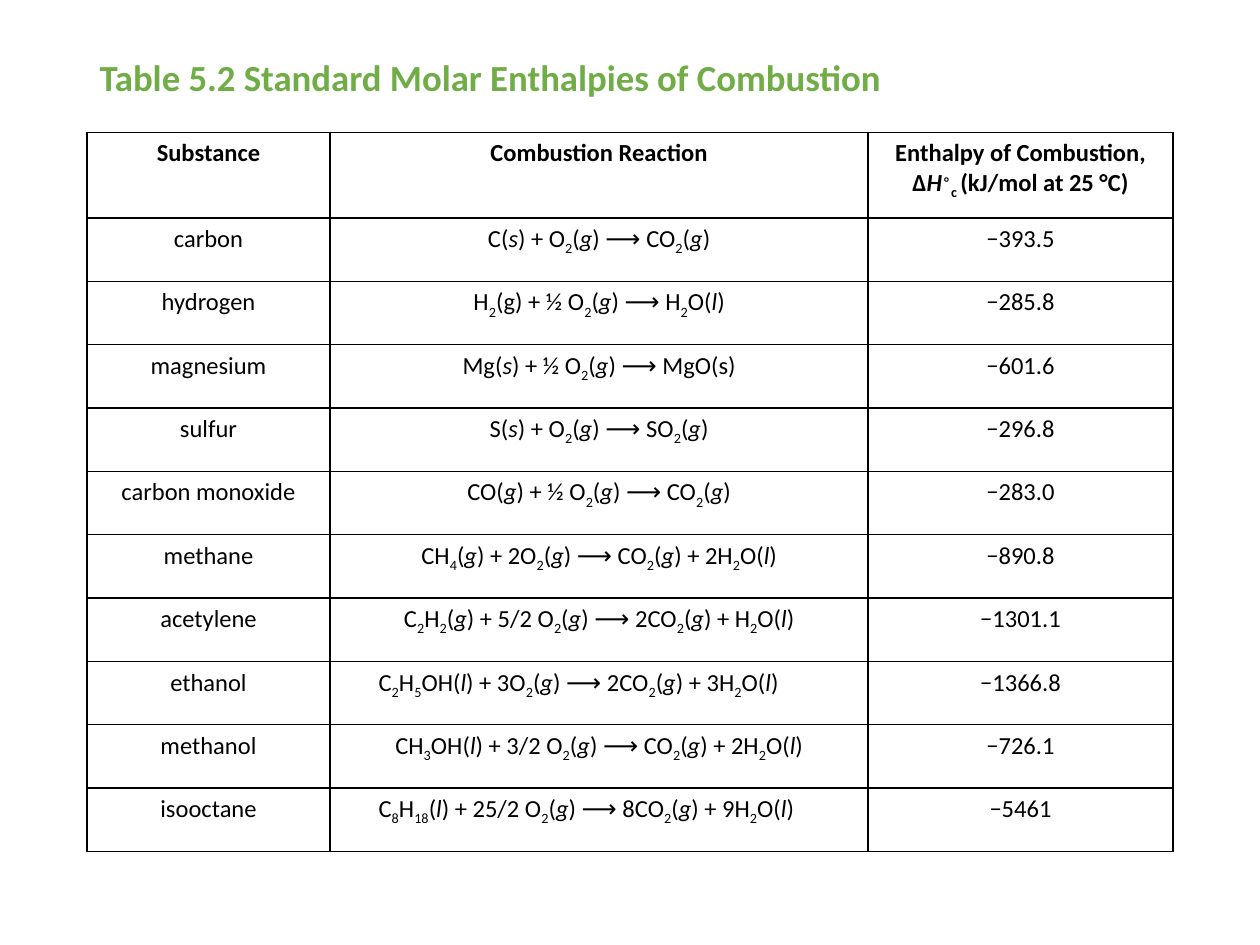
from typing import NamedTuple

from lxml.etree import SubElement
from pptx import Presentation
from pptx.dml.color import RGBColor
from pptx.enum.text import MSO_ANCHOR as Anchor, MSO_AUTO_SIZE as AutoSize, PP_ALIGN as Align
from pptx.oxml.ns import qn
from pptx.util import Inches, Pt

COLORS = {"heading": "70AD47", "ink": "000000"}
FONT = "Calibri"
LEFT, WIDTH = 0.69, 8.62
TABLE_TOP, TABLE_HEIGHT, HEADER_HEIGHT = 1.05, 5.71, 0.68
COLUMN_WIDTHS = (1.93, 4.27, 2.42)
BASELINES = {"_": "-25000", "^": "30000"}


class Combustion(NamedTuple):
    substance: str
    reaction: str
    enthalpy: str


HEADER = Combustion("Substance", "Combustion Reaction",
                    "Enthalpy of Combustion, Δ*H*^∘^_c _(kJ/mol at 25 °C)")
COMBUSTIONS = [
    Combustion("carbon", "C(*s*) + O_2_(*g*) ⟶ CO_2_(*g*)", "−393.5"),
    Combustion("hydrogen", "H_2_(g) + ½ O_2_(*g*) ⟶ H_2_O(*l*)", "−285.8"),
    Combustion("magnesium", "Mg(*s*) + ½ O_2_(*g*) ⟶ MgO(s)", "−601.6"),
    Combustion("sulfur", "S(*s*) + O_2_(*g*) ⟶ SO_2_(*g*)", "−296.8"),
    Combustion("carbon monoxide", "CO(*g*) + ½ O_2_(*g*) ⟶ CO_2_(*g*)", "−283.0"),
    Combustion("methane", "CH_4_(*g*) + 2O_2_(*g*) ⟶ CO_2_(*g*) + 2H_2_O(*l*)", "−890.8"),
    Combustion("acetylene", "C_2_H_2_(*g*) + 5/2 O_2_(*g*) ⟶ 2CO_2_(*g*) + H_2_O(*l*)", "−1301.1"),
    Combustion("ethanol", "C_2_H_5_OH(*l*) + 3O_2_(*g*) ⟶ 2CO_2_(*g*) + 3H_2_O(*l*)\t", "−1366.8"),
    Combustion("methanol", "CH_3_OH(*l*) + 3/2 O_2_(*g*) ⟶ CO_2_(*g*) + 2H_2_O(*l*)", "−726.1"),
    Combustion("isooctane", "C_8_H_18_(*l*) + 25/2 O_2_(*g*) ⟶ 8CO_2_(*g*) + 9H_2_O(*l*)\t", "−5461"),
]


def split_markup(text: str) -> list[tuple[str, str]]:
    pieces, mark, chunk = [], "", ""
    for char in text:
        if char in "*_^":
            pieces.append((chunk, mark))
            mark, chunk = "" if mark else char, ""
        else:
            chunk += char
    pieces.append((chunk, mark))
    return [piece for piece in pieces if piece[0]]


def write_text(frame, text: str, *, size: float, color: str, bold: bool = False,
               align: Align = Align.LEFT, line_spacing: float = 1.0) -> None:
    paragraph = frame.paragraphs[0]
    paragraph.alignment = align
    paragraph.line_spacing = line_spacing
    for chunk, mark in split_markup(text):
        run = paragraph.add_run()
        run.text = chunk
        run.font.name = FONT
        run.font.size = Pt(size)
        run.font.bold = bold
        run.font.italic = mark == "*"
        run.font.color.rgb = RGBColor.from_string(COLORS[color])
        if mark in BASELINES:
            run._r.get_or_add_rPr().set("baseline", BASELINES[mark])


def outline_cell(cell, color: str, width: float) -> None:
    properties = cell._tc.get_or_add_tcPr()
    for position, side in enumerate(("lnL", "lnR", "lnT", "lnB")):
        border = SubElement(properties, qn(f"a:{side}"), w=str(Pt(width)))
        fill = SubElement(border, qn("a:solidFill"))
        SubElement(fill, qn("a:srgbClr"), val=COLORS[color])
        properties.insert(position, border)


def add_heading(slide, text: str) -> None:
    heading = slide.shapes.title
    heading.left, heading.top = Inches(LEFT), Inches(0.4)
    heading.width, heading.height = Inches(WIDTH), Inches(0.46)
    frame = heading.text_frame
    frame.word_wrap = True
    frame.auto_size = AutoSize.NONE
    frame.vertical_anchor = Anchor.MIDDLE
    write_text(frame, text, size=21, color="heading", bold=True, line_spacing=0.9)


def add_enthalpy_table(slide, header: Combustion, combustions: list[Combustion]) -> None:
    rows = [header, *combustions]
    table = slide.shapes.add_table(
        len(rows), len(COLUMN_WIDTHS), Inches(LEFT), Inches(TABLE_TOP),
        Inches(WIDTH), Inches(TABLE_HEIGHT)).table
    table.first_row = table.horz_banding = False
    for column, width in zip(table.columns, COLUMN_WIDTHS):
        column.width = Inches(width)
    body_height = (TABLE_HEIGHT - HEADER_HEIGHT) / len(combustions)
    for index, (row, combustion) in enumerate(zip(table.rows, rows)):
        row.height = Inches(body_height if index else HEADER_HEIGHT)
        for cell, text in zip(row.cells, combustion):
            cell.fill.background()
            outline_cell(cell, "ink", 1)
            write_text(cell.text_frame, text, size=14, color="ink",
                       bold=index == 0, align=Align.CENTER)


def main() -> None:
    deck = Presentation()
    deck.slide_width, deck.slide_height = Inches(10), Inches(7.5)
    slide = deck.slides.add_slide(deck.slide_layouts[5])
    add_heading(slide, "Table 5.2 Standard Molar Enthalpies of Combustion")
    add_enthalpy_table(slide, HEADER, COMBUSTIONS)
    deck.save("out.pptx")


if __name__ == "__main__":
    main()
